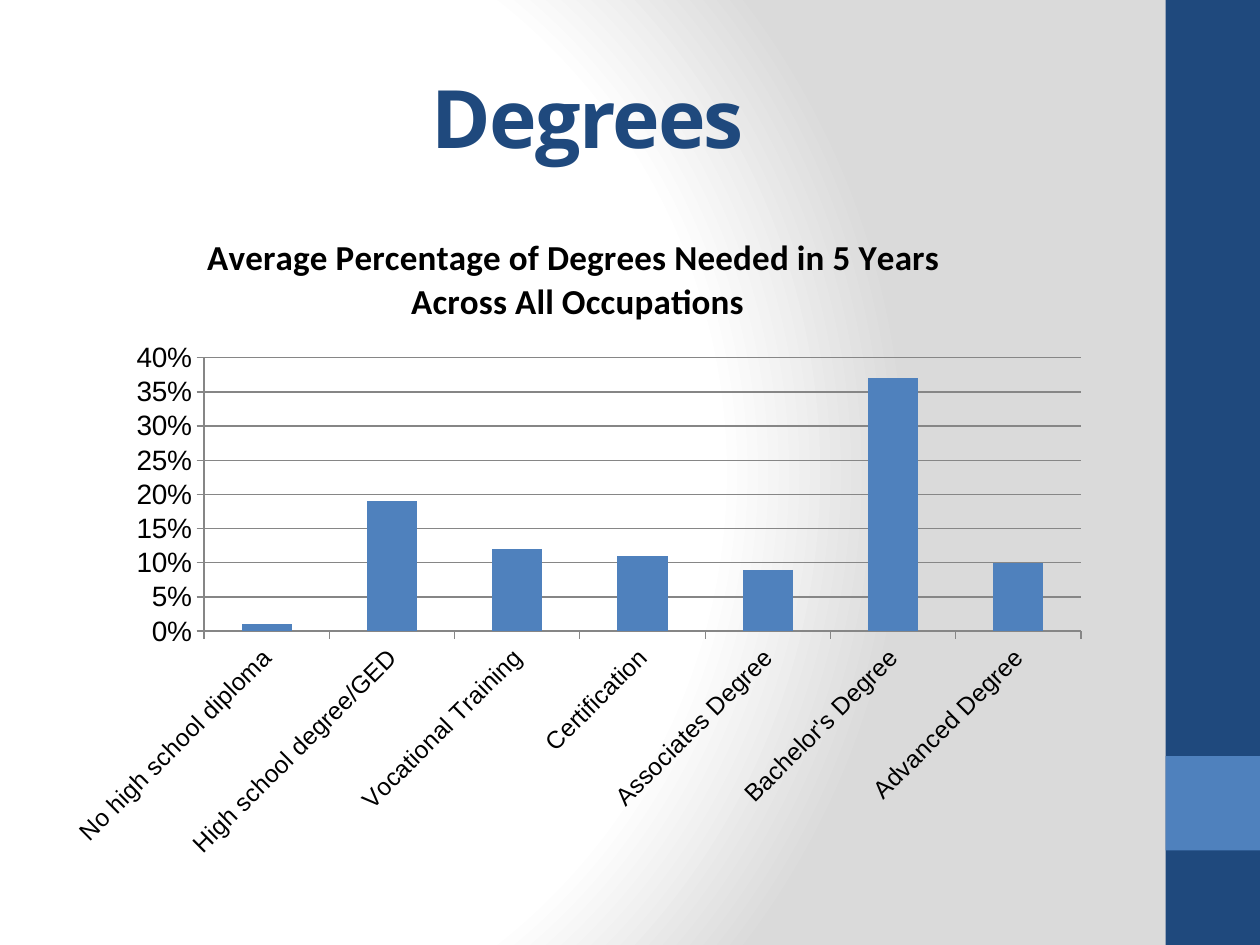
from pptx import Presentation
from pptx.chart.data import CategoryChartData
from pptx.dml.color import RGBColor
from pptx.enum.chart import XL_CHART_TYPE as ChartType, XL_TICK_MARK as TickMark
from pptx.enum.shapes import MSO_SHAPE as Preset
from pptx.enum.text import MSO_ANCHOR as Anchor, PP_ALIGN as Align
from pptx.oxml import parse_xml
from pptx.oxml.ns import nsdecls, qn
from pptx.util import Inches, Pt

NAVY, BLUE, GRID, BLACK = "1F497D", "4F81BD", "868686", "000000"
CHART_LEFT, CHART_TOP, CHART_WIDTH, CHART_HEIGHT = 0.42, 1.67, 8.33, 5.25
DEGREES = {
    "No high school diploma": 0.01,
    "High school degree/GED": 0.19,
    "Vocational Training": 0.12,
    "Certification": 0.11,
    "Associates Degree": 0.09,
    "Bachelor's Degree": 0.37,
    "Advanced Degree": 0.10,
}


def color(hex_value):
    """Turn a hex string into an RGB colour."""
    return RGBColor.from_string(hex_value)


def style_font(font, name, size, hex_value, bold=False):
    """Set the face, size, colour and weight of a font."""
    font.name, font.size, font.bold = name, Pt(size), bold
    font.color.rgb = color(hex_value)


def paint_background(slide):
    """Fill the slide with a circular gradient from white to grey."""
    slide.background.fill.gradient()
    default = slide.element.find(".//" + qn("a:gradFill"))
    stops = "".join(
        f'<a:gs pos="{percent * 1000}"><a:srgbClr val="{tint}"/></a:gs>'
        for percent, tint in [(0, "FFFFFF"), (75, "FFFFFF"), (100, "DADADA")]
    )
    glow = parse_xml(
        f'<a:gradFill {nsdecls("a")} rotWithShape="1"><a:gsLst>{stops}</a:gsLst>'
        '<a:path path="circle"><a:fillToRect l="20000" t="50000" r="100000" b="50000"/>'
        "</a:path></a:gradFill>"
    )
    default.getparent().replace(default, glow)


def add_band(slide, top, height, hex_value):
    """Add a plain block to the right-hand strip."""
    band = slide.shapes.add_shape(
        Preset.RECTANGLE, Inches(9.25), Inches(top), Inches(0.75), Inches(height)
    )
    band.shadow.inherit = False
    band.fill.solid()
    band.fill.fore_color.rgb = color(hex_value)
    band.line.fill.background()


def add_heading(slide, wording):
    """Add the centred slide heading."""
    heading = slide.shapes.add_textbox(
        Inches(0.5), Inches(0.3), Inches(8.33), Inches(1.25)
    ).text_frame
    heading.word_wrap = True
    heading.vertical_anchor = Anchor.MIDDLE
    heading.text = wording
    line = heading.paragraphs[0]
    line.alignment = Align.CENTER
    style_font(line.runs[0].font, "Open Sans", 46, NAVY, True)
    line.runs[0].font._element.set("spc", "-100")


def style_axis(axis, size):
    """Give an axis its grey line, outer ticks and label font."""
    axis.major_tick_mark, axis.minor_tick_mark = TickMark.OUTSIDE, TickMark.NONE
    axis.format.line.color.rgb = color(GRID)
    axis.format.line.width = Pt(0.75)
    style_font(axis.tick_labels.font, "Arial", size, BLACK)


def title_chart(chart, wording):
    """Write the chart title, one paragraph for each line."""
    chart.has_title = True
    chart.chart_title.include_in_layout = False
    title = chart.chart_title.text_frame
    title.text = wording
    for line in title.paragraphs:
        style_font(line.runs[0].font, "Calibri", 20, BLACK, True)


def place_plot(chart, left, top, width, height):
    """Fix the inner plot area, given in inches on the slide."""
    plot_area = chart._chartSpace.chart.plotArea
    for automatic in plot_area.findall(qn("c:layout")):
        plot_area.remove(automatic)
    fractions = {
        "x": (left - CHART_LEFT) / CHART_WIDTH,
        "y": (top - CHART_TOP) / CHART_HEIGHT,
        "w": width / CHART_WIDTH,
        "h": height / CHART_HEIGHT,
    }
    modes = "".join(f'<c:{side}Mode val="edge"/>' for side in "xy")
    sizes = "".join(f'<c:{key} val="{part:.5f}"/>' for key, part in fractions.items())
    plot_area.insert(0, parse_xml(
        f'<c:layout {nsdecls("c")}><c:manualLayout><c:layoutTarget val="inner"/>'
        f"{modes}{sizes}</c:manualLayout></c:layout>"
    ))


def add_degree_chart(slide):
    """Add the column chart of degrees needed."""
    degree_data = CategoryChartData(number_format="0%")
    degree_data.categories = list(DEGREES)
    degree_data.add_series("Series 1", list(DEGREES.values()))
    chart = slide.shapes.add_chart(
        ChartType.COLUMN_CLUSTERED, Inches(CHART_LEFT), Inches(CHART_TOP),
        Inches(CHART_WIDTH), Inches(CHART_HEIGHT), degree_data,
    ).chart
    style_font(chart.font, "Calibri", 10, BLACK)
    chart.has_legend = False
    title_chart(
        chart,
        "Average Percentage of Degrees Needed in 5 Years \nAcross All Occupations",
    )
    place_plot(chart, 1.62, 2.84, 6.96, 2.17)

    columns = chart.plots[0]
    columns.gap_width = 150
    columns.vary_by_categories = False
    columns.series[0].format.fill.solid()
    columns.series[0].format.fill.fore_color.rgb = color(BLUE)

    degrees, share = chart.category_axis, chart.value_axis
    style_axis(degrees, 14)
    degrees._element.find(qn("c:txPr")).find(qn("a:bodyPr")).set("rot", "-2700000")
    style_axis(share, 16)
    share.minimum_scale, share.maximum_scale, share.major_unit = 0, 0.4, 0.05
    share.tick_labels.number_format = "0%"
    share.tick_labels.number_format_is_linked = False
    share.has_major_gridlines = True
    share.major_gridlines.format.line.color.rgb = color(GRID)
    share.major_gridlines.format.line.width = Pt(0.75)


def main():
    """Build and save the slide."""
    deck = Presentation()
    deck.slide_width, deck.slide_height = Inches(10), Inches(7.5)
    slide = deck.slides.add_slide(deck.slide_layouts[6])
    paint_background(slide)
    add_band(slide, 0, 7.5, NAVY)
    add_band(slide, 6, 0.75, BLUE)
    add_heading(slide, "Degrees")
    add_degree_chart(slide)
    deck.save("out.pptx")


if __name__ == "__main__":
    main()
